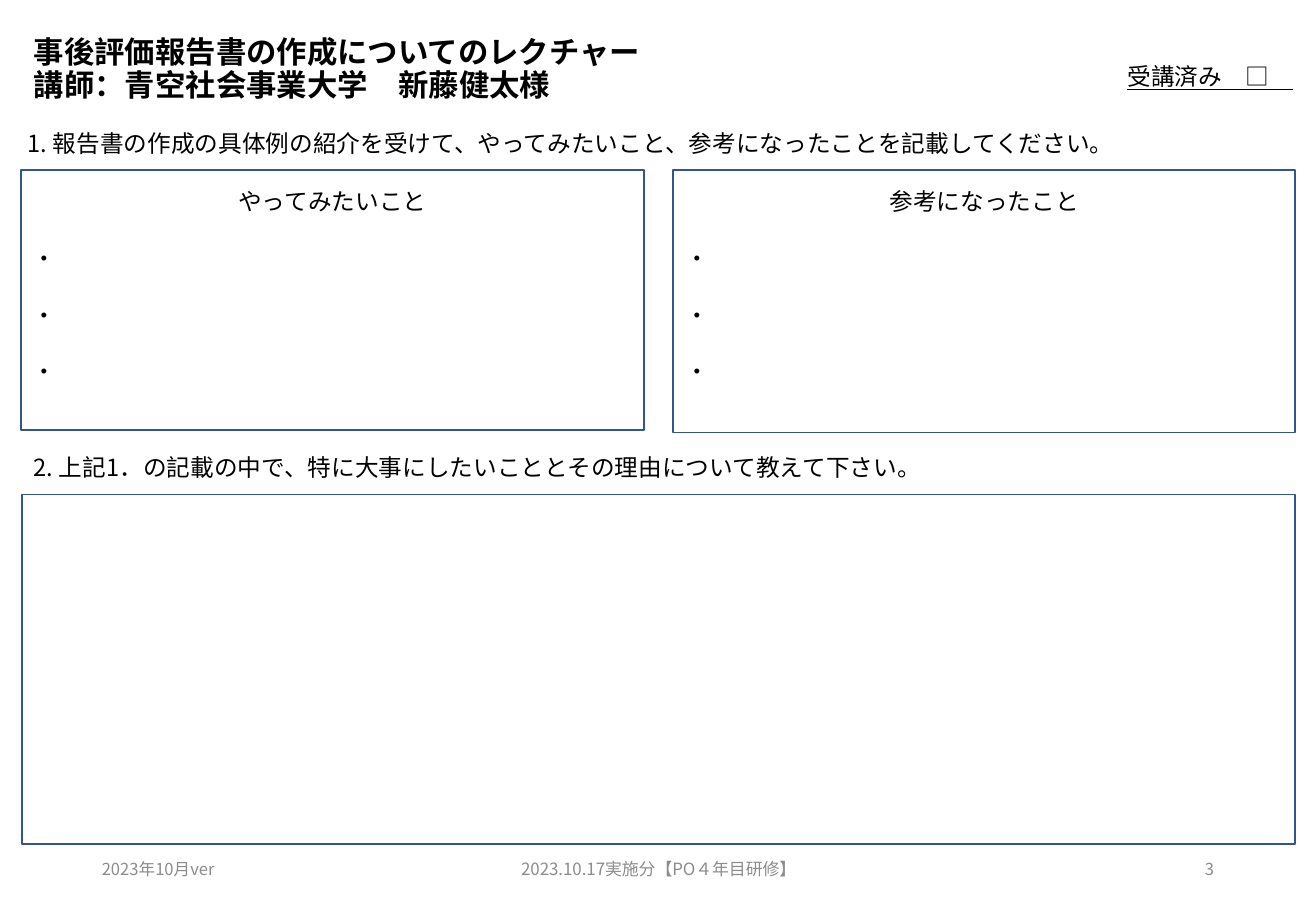
from lxml import etree
from pptx import Presentation
from pptx.dml.color import RGBColor
from pptx.enum.shapes import MSO_SHAPE
from pptx.enum.text import MSO_ANCHOR, PP_ALIGN
from pptx.oxml.ns import qn
from pptx.util import Inches, Pt

SLIDE_WIDTH, SLIDE_HEIGHT = Inches(10.83), Inches(7.5)
FONT = "Noto Sans CJK JP"
BLACK, GRAY, BLUE, WHITE = "000000", "8C8C8C", "325491", "FFFFFF"
LEFT, CENTER, RIGHT = PP_ALIGN.LEFT, PP_ALIGN.CENTER, PP_ALIGN.RIGHT
TOP, MIDDLE = MSO_ANCHOR.TOP, MSO_ANCHOR.MIDDLE
RECTANGLE = MSO_SHAPE.RECTANGLE

BODY_SIZE = 14
LINE_RATIO = 1.2
BODY_LINE = BODY_SIZE * LINE_RATIO
BULLET_COUNT = 3


def color(hex_string):
    return RGBColor.from_string(hex_string)


def place(left, top, width, height):
    """Turn percentages of the slide into lengths."""
    return (int(SLIDE_WIDTH * left / 100), int(SLIDE_HEIGHT * top / 100),
            int(SLIDE_WIDTH * width / 100), int(SLIDE_HEIGHT * height / 100))


def write(paragraph, text, size=BODY_SIZE, hex_color=BLACK, bold=False,
          underline=False, align=LEFT, line=LINE_RATIO, before=0):
    paragraph.alignment = align
    paragraph.line_spacing = Pt(size * line)
    paragraph.space_before = Pt(before)
    for index, part in enumerate(text.split("\n")):
        if index:
            paragraph.add_line_break()
        run = paragraph.add_run()
        run.text = part
        font = run.font
        font.name, font.size = FONT, Pt(size)
        font.bold, font.underline = bold, underline
        font.color.rgb = color(hex_color)
        east_asian = etree.SubElement(run._r.get_or_add_rPr(), qn("a:ea"))
        east_asian.set("typeface", FONT)


def add_label(slide, area, text, anchor=TOP, **text_format):
    frame = slide.shapes.add_textbox(*place(*area)).text_frame
    frame.word_wrap = True
    frame.vertical_anchor = anchor
    write(frame.paragraphs[0], text, **text_format)


def add_answer_box(slide, area):
    shape = slide.shapes.add_shape(RECTANGLE, *place(*area))
    shape.shadow.inherit = False
    shape.fill.solid()
    shape.fill.fore_color.rgb = color(WHITE)
    shape.line.color.rgb = color(BLUE)
    shape.line.width = Pt(1)
    return shape


def add_bullet_box(slide, area, heading):
    frame = add_answer_box(slide, area).text_frame
    frame.word_wrap = True
    frame.vertical_anchor = TOP
    frame.margin_top = Inches(0.14)
    write(frame.paragraphs[0], heading, align=CENTER)
    for _ in range(BULLET_COUNT):
        write(frame.add_paragraph(), "・", before=BODY_LINE)


def main():
    presentation = Presentation()
    presentation.slide_width = SLIDE_WIDTH
    presentation.slide_height = SLIDE_HEIGHT
    slide = presentation.slides.add_slide(presentation.slide_layouts[6])

    # Title and attendance check
    add_label(slide, (1.66, 1.87, 86.24, 11.47),
              "事後評価報告書の作成についてのレクチャー\n講師：青空社会事業大学　新藤健太様",
              anchor=MIDDLE, size=18, bold=True, line=1.08)
    add_label(slide, (84.76, 6.13, 15.24, 4.53), "受講済み　□　", underline=True)

    # Question 1 with two bullet boxes
    add_label(slide, (1.2, 13.47, 95.94, 4.53),
              "1. 報告書の作成の具体例の紹介を受けて、やってみたいこと、参考になったことを記載してください。")
    add_bullet_box(slide, (1.57, 18.67, 47.37, 28.53), "やってみたいこと")
    add_bullet_box(slide, (51.15, 18.67, 47.28, 28.8), "参考になったこと")

    # Question 2 with one open box
    add_label(slide, (1.66, 49.07, 96.77, 4.53),
              "2. 上記1．の記載の中で、特に大事にしたいこととその理由について教えて下さい。")
    add_answer_box(slide, (1.66, 54.27, 96.77, 38.4))

    # Footer
    for left, width, text, size, align in (
            (6.83, 22.53, "2023年10月ver", 9.8, LEFT),
            (33.15, 33.8, "2023.10.17実施分【PO４年目研修】", 10, CENTER),
            (70.64, 22.53, "3", 9.8, RIGHT)):
        add_label(slide, (left, 92.67, width, 5.33), text, anchor=MIDDLE,
                  size=size, hex_color=GRAY, align=align)

    presentation.save("out.pptx")


if __name__ == "__main__":
    main()
